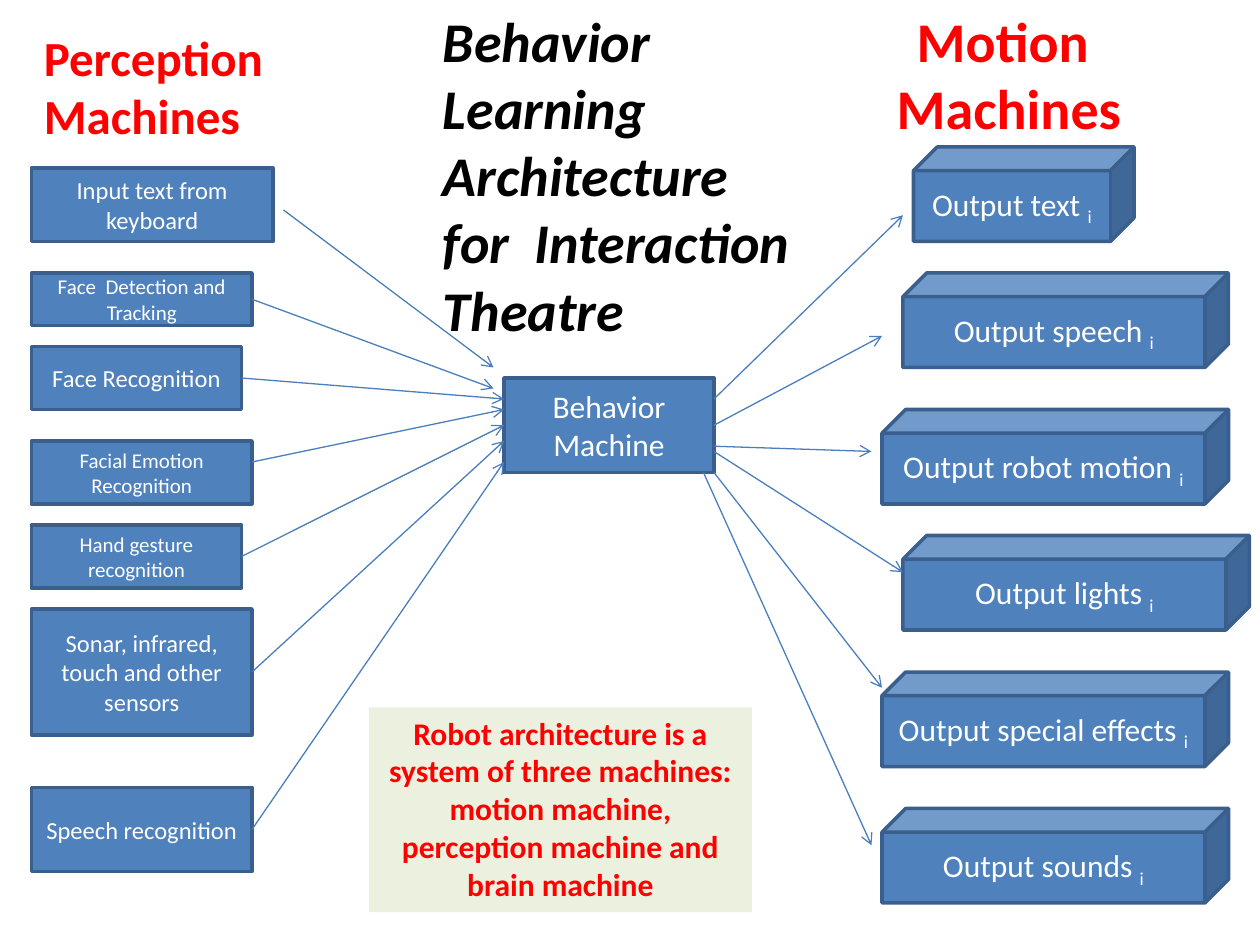
from dataclasses import dataclass
from lxml import etree
from pptx import Presentation
from pptx import util as u
from pptx.dml.color import RGBColor
from pptx.enum import shapes, text
from pptx.oxml.ns import qn

PX = 9525


@dataclass(frozen=True)
class Theme:
    font: str = "Calibri"
    fill: str = "4F81BD"
    edge: str = "3A5F8C"
    link: str = "4B7EBC"
    pale: str = "EBF1DE"
    red: str = "FF0000"
    black: str = "000000"
    white: str = "FFFFFF"
    tiny: int = 12
    small: int = 14
    body: int = 18
    head: int = 28
    title: int = 32


T = Theme()
KIND = shapes.MSO_SHAPE
LEFT, MID = text.PP_ALIGN.LEFT, text.PP_ALIGN.CENTER


def emu(*nums):
    return [u.Emu(n * PX) for n in nums]


def rgb(code):
    return RGBColor.from_string(code)


def style(frame, size, color, align=MID, bold=False, italic=False):
    frame.word_wrap = True
    for para in frame.paragraphs:
        para.alignment = align
        for run in para.runs:
            font = run.font
            font.name, font.size = T.font, u.Pt(size)
            font.bold, font.italic = bold, italic
            font.color.rgb = rgb(color)


def block(slide, kind, rect, words, size, sub=""):
    shape = slide.shapes.add_shape(kind, *emu(*rect))
    shape.shadow.inherit = False
    shape.fill.solid()
    shape.fill.fore_color.rgb = rgb(T.fill)
    shape.line.color.rgb = rgb(T.edge)
    shape.line.width = u.Pt(2)
    frame = shape.text_frame
    frame.text = words
    frame.vertical_anchor = text.MSO_ANCHOR.MIDDLE
    if sub:
        run = frame.paragraphs[0].add_run()
        run.text = sub
        run._r.get_or_add_rPr().set("baseline", "-25000")
    style(frame, size, T.white)


def label(slide, rect, words, size, color, align=MID, italic=False):
    shape = slide.shapes.add_textbox(*emu(*rect))
    frame = shape.text_frame
    frame.text = words
    frame.auto_size = text.MSO_AUTO_SIZE.SHAPE_TO_FIT_TEXT
    style(frame, size, color, align, True, italic)
    return shape


def senses(slide, box):
    x, y, w, h = box
    label(slide, (x, y + 16, w, 100), "Perception Machines", T.head, T.red, LEFT)
    rows = [
        ("Input text from keyboard", 128, 184, 56, T.small),
        ("Face  Detection and Tracking", 208, 168, 40, T.tiny),
        ("Face Recognition", 264, 160, 48, T.small),
        ("Facial Emotion Recognition", 336, 168, 48, T.tiny),
        ("Hand gesture recognition", 400, 160, 48, T.tiny),
        ("Sonar, infrared, touch and other sensors", 464, 168, 96, T.small),
        ("Speech recognition", 600, 168, 64, T.small),
    ]
    for words, top, wide, high, size in rows:
        block(slide, KIND.RECTANGLE, (x, y + top, wide, high), words, size)


def center(slide, box):
    x, y, w, h = box
    label(slide, (x + 47, y, 288, 268),
          "Behavior Learning Architecture for  Interaction Theatre",
          T.title, T.black, LEFT, True)
    block(slide, KIND.RECTANGLE, (x + 103, y + 288, 160, 72),
          "Behavior Machine", T.body)
    note = label(slide, (x, y + 539, 292, 156),
                 "Robot architecture is a system of three machines: motion machine, "
                 "perception machine and brain machine", T.body, T.red)
    note.fill.solid()
    note.fill.fore_color.rgb = rgb(T.pale)


def motion(slide, box):
    x, y, w, h = box
    label(slide, (x, y, 216, 113), "Motion\n Machines", T.title, T.red)
    rows = [
        ("text", 40, 112, 168),
        ("speech", 32, 208, 248),
        ("robot motion", 16, 312, 264),
        ("lights", 32, 408, 264),
        ("special effects", 16, 512, 264),
        ("sounds", 16, 616, 264),
    ]
    for name, left, top, wide in rows:
        block(slide, KIND.CUBE, (x + left, y + top, wide, 72),
              f"Output {name} ", T.body, "i")


def links(slide, box, ends):
    x, y, w, h = box
    for ax, ay, bx, by in ends:
        line = slide.shapes.add_connector(
            shapes.MSO_CONNECTOR.STRAIGHT,
            *emu(x + ax, y + ay, x + bx, y + by))
        line.line.color.rgb = rgb(T.link)
        line.line.width = u.Pt(0.75)
        tip = etree.SubElement(line.line._get_or_add_ln(), qn("a:tailEnd"))
        tip.set("type", "arrow")
        etree.SubElement(line._element.spPr, qn("a:effectLst"))


def main():
    deck = Presentation()
    deck.slide_width, deck.slide_height = emu(960, 720)
    slide = deck.slides.add_slide(deck.slide_layouts[6])
    senses(slide, (24, 0, 216, 664))
    center(slide, (281, 0, 335, 695))
    motion(slide, (656, 0, 296, 688))
    links(slide, (184, 160, 200, 472), [
        (32, 0, 192, 120), (8, 68, 192, 136), (0, 128, 200, 144),
        (8, 192, 200, 152), (0, 264, 200, 164), (8, 352, 200, 176),
        (8, 472, 200, 192),
    ])
    links(slide, (536, 164, 152, 480), [
        (8, 140, 152, 0), (8, 160, 136, 92), (8, 176, 128, 180),
        (8, 180, 152, 272), (8, 196, 136, 360), (0, 196, 128, 480),
    ])
    deck.save("out.pptx")


if __name__ == "__main__":
    main()
